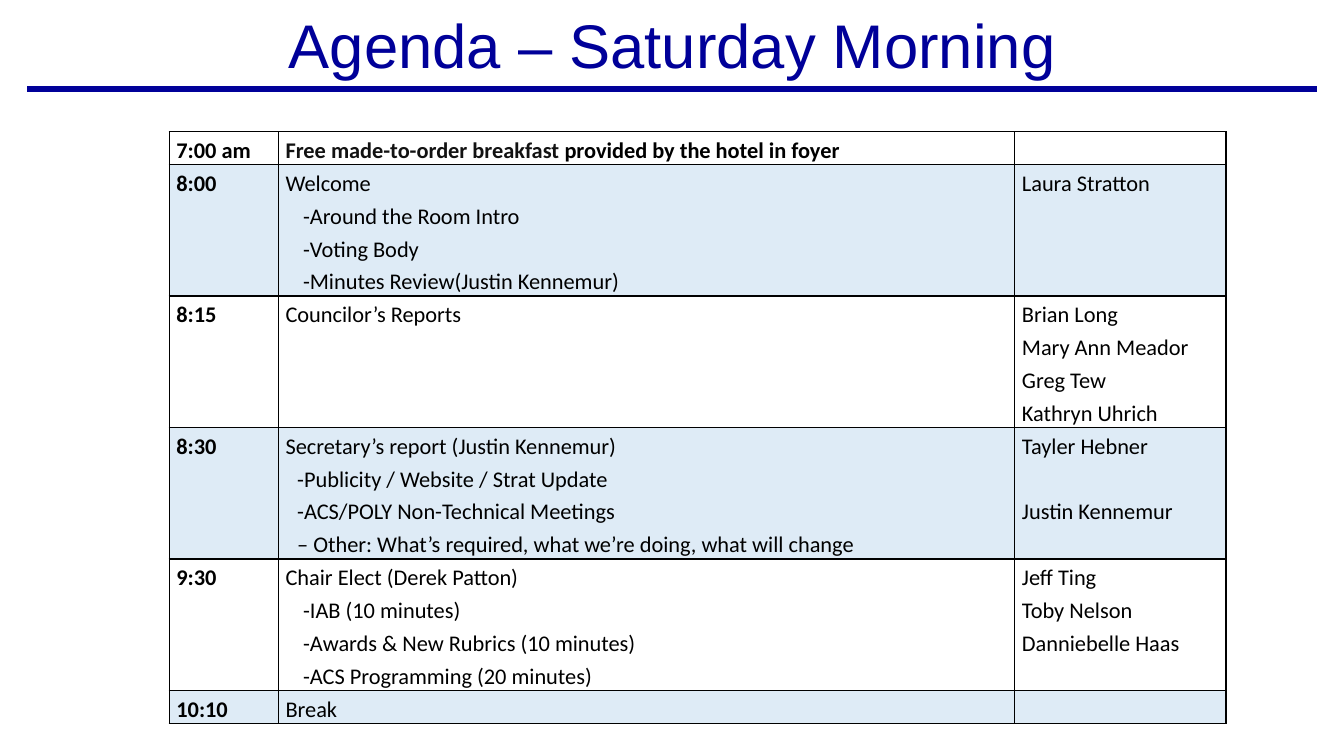
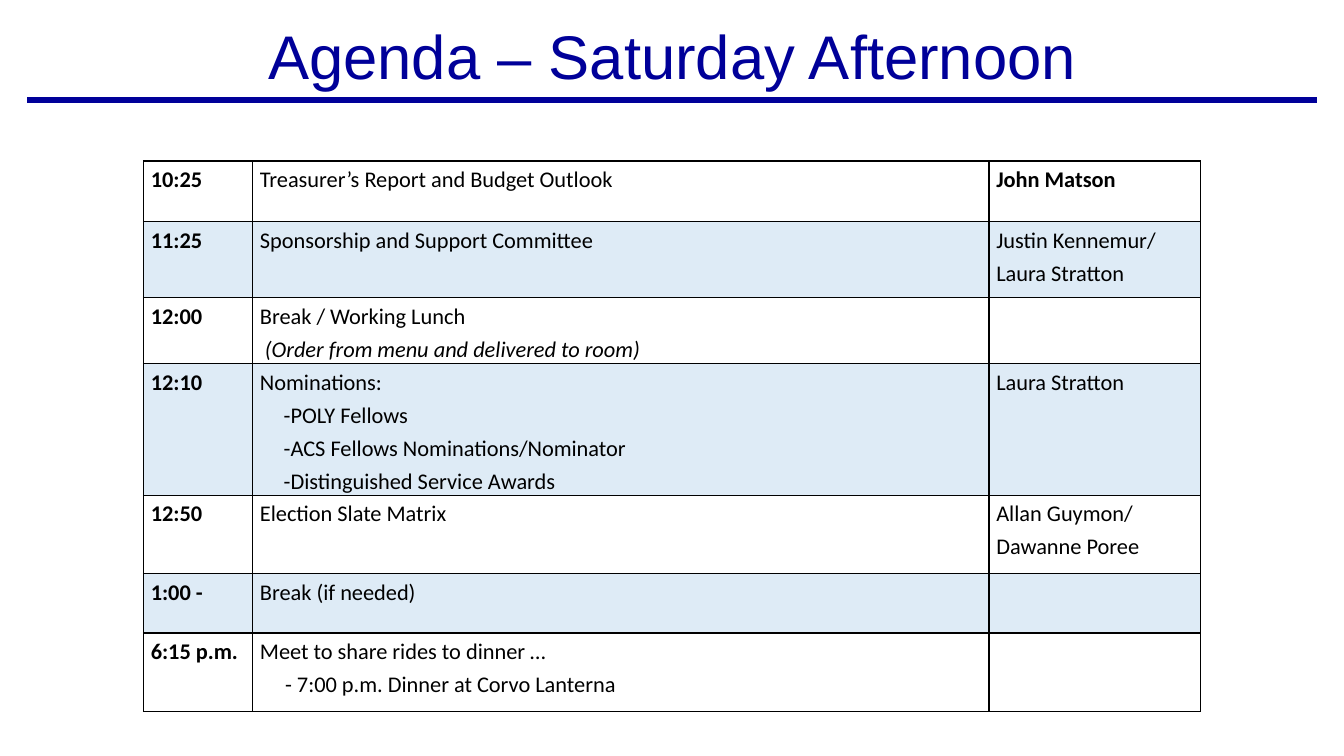
from lxml import etree
from pptx import Presentation
from pptx.dml.color import RGBColor
from pptx.enum import shapes, text
from pptx.oxml import ns
from pptx.util import Pt

# Shared look
NAVY, BLACK, CHARCOAL, BAND = "000099", "000000", "121212", "5B9BD5"
BAND_OPACITY = 20
TITLE_HEIGHT = 57.6
COLUMN_WIDTHS = (78, 526, 151)
LINE_HEIGHT = 23.4


def color(hex_value):
    return RGBColor.from_string(hex_value)


def sub_element(parent, tag, **attributes):
    return etree.SubElement(parent, ns.qn(tag), attributes)


# Text
def write(paragraph, content, size=16, font="Calibri", hex_color=BLACK, bold=False,
          italic=False, spacing=1.2, align=None, before=0):
    run = paragraph.add_run()
    run.text = content
    run.font.size = Pt(size)
    run.font.name = font
    run.font.bold = bold
    run.font.italic = italic
    run.font.color.rgb = color(hex_color)
    paragraph.line_spacing = spacing
    paragraph.space_before = Pt(before)
    if align is not None:
        paragraph.alignment = align


def line(content, indent=0, hanging=0, **text_format):
    """One paragraph of a cell; content is a string or (string, colour) pairs."""
    return content, indent, hanging, text_format


def fill_text(frame, lines, bold):
    for index, entry in enumerate(lines):
        if isinstance(entry, str):
            entry = line(entry)
        content, indent, hanging, text_format = entry
        paragraph = frame.add_paragraph() if index else frame.paragraphs[0]
        pieces = [(content, BLACK)] if isinstance(content, str) else content
        for piece, hex_color in pieces:
            write(paragraph, piece, hex_color=hex_color, **{"bold": bold, **text_format})
        if indent:
            properties = paragraph._p.get_or_add_pPr()
            properties.set("marL", str(Pt(indent)))
            properties.set("indent", str(Pt(-hanging)))


# Title and rule
def add_heading(presentation, title, top):
    slide = presentation.slides.add_slide(presentation.slide_layouts[5])
    shape = slide.shapes.title
    shape.left, shape.top = Pt(11.5), Pt(top)
    shape.width, shape.height = Pt(938), Pt(TITLE_HEIGHT)
    frame = shape.text_frame
    frame.word_wrap = True
    frame.auto_size = text.MSO_AUTO_SIZE.NONE
    frame.vertical_anchor = text.MSO_ANCHOR.MIDDLE
    write(frame.paragraphs[0], title, size=44, font="Arial", hex_color=NAVY,
          spacing=0.9, align=text.PP_ALIGN.CENTER)

    rule_top = Pt(top + TITLE_HEIGHT)
    rule = slide.shapes.add_connector(shapes.MSO_CONNECTOR.STRAIGHT,
                                      Pt(19.5), rule_top, Pt(941), rule_top)
    rule.line.color.rgb = color(NAVY)
    rule.line.width = Pt(4.5)
    sub_element(rule._element.spPr, "a:effectLst")
    return slide


# Table
def format_cell(cell, banded):
    cell.margin_left = cell.margin_right = Pt(5.2)
    cell.margin_top = cell.margin_bottom = 0
    cell.vertical_anchor = text.MSO_ANCHOR.TOP
    properties = cell._tc.get_or_add_tcPr()
    for side in ("L", "R", "T", "B"):
        border = sub_element(properties, f"a:ln{side}", w=str(Pt(1)))
        sub_element(sub_element(border, "a:solidFill"), "a:srgbClr", val=BLACK)
    if banded:
        fill = sub_element(properties, "a:solidFill")
        band = sub_element(fill, "a:srgbClr", val=BAND)
        sub_element(band, "a:alpha", val=str(BAND_OPACITY * 1000))
    else:
        sub_element(properties, "a:noFill")


def add_agenda(slide, left, top, rows):
    """Each row is (height, time, topic lines, speaker lines)."""
    frame = slide.shapes.add_table(len(rows), len(COLUMN_WIDTHS), Pt(left), Pt(top),
                                   Pt(sum(COLUMN_WIDTHS)), Pt(sum(row[0] for row in rows)))
    table = frame.table
    table.first_row = table.horz_banding = False
    for column, width in zip(table.columns, COLUMN_WIDTHS):
        column.width = Pt(width)
    for row_index, (height, time, topics, speakers) in enumerate(rows):
        table.rows[row_index].height = Pt(height)
        for column_index, lines in enumerate(([time], topics, speakers)):
            cell = table.cell(row_index, column_index)
            format_cell(cell, banded=row_index % 2 == 1)
            fill_text(cell.text_frame, lines, bold=column_index == 0)


def items(*contents, indent=12.5):
    return [line(content, indent) for content in contents]


MORNING = [
    (LINE_HEIGHT, "7:00 am",
     [line([("Free made-to-order breakfast ", CHARCOAL),
            ("provided by the hotel in foyer", BLACK)], bold=True)], []),
    (4 * LINE_HEIGHT, "8:00",
     ["Welcome", *items("-Around the Room Intro", "-Voting Body",
                        "-Minutes Review(Justin Kennemur)")],
     ["Laura Stratton"]),
    (4 * LINE_HEIGHT, "8:15", ["Councilor’s Reports"],
     ["Brian Long", "Mary Ann Meador", "Greg Tew", "Kathryn Uhrich"]),
    (4 * LINE_HEIGHT, "8:30",
     ["Secretary’s report (Justin Kennemur)",
      line("-Publicity / Website / Strat Update", 8.3),
      line("-ACS/POLY Non-Technical Meetings", 17, 8.7),
      line("– Other: What’s required, what we’re doing, what will change", 17, 8.7)],
     ["Tayler Hebner", line("Justin Kennemur", before=LINE_HEIGHT)]),
    (4 * LINE_HEIGHT, "9:30",
     ["Chair Elect (Derek Patton)",
      *items("-IAB (10 minutes)", "-Awards & New Rubrics (10 minutes)",
             "-ACS Programming (20 minutes)")],
     ["Jeff Ting", "Toby Nelson", "Danniebelle Haas"]),
    (LINE_HEIGHT, "10:10", ["Break"], []),
]

AFTERNOON = [
    (43.3, "10:25", ["Treasurer’s Report and Budget Outlook"],
     [line("John Matson", bold=True)]),
    (54.5, "11:25", ["Sponsorship and Support Committee"],
     ["Justin Kennemur/ Laura Stratton"]),
    (2 * LINE_HEIGHT, "12:00",
     ["Break / Working Lunch",
      line("(Order from menu and delivered to room)", 3.6, italic=True)], []),
    (4 * LINE_HEIGHT, "12:10",
     ["Nominations:", *items("-POLY Fellows", "-ACS Fellows Nominations/Nominator",
                             "-Distinguished Service Awards", indent=17)],
     ["Laura Stratton"]),
    (56, "12:50", ["Election Slate Matrix"], ["Allan Guymon/", "Dawanne Poree"]),
    (42.5, "1:00 -", ["Break (if needed)"], []),
    (56, "6:15 p.m.",
     ["Meet to share rides to dinner …",
      line("- 7:00 p.m. Dinner at Corvo Lanterna", 18)], []),
]


def main():
    presentation = Presentation()
    presentation.slide_width, presentation.slide_height = Pt(960), Pt(540)

    morning = add_heading(presentation, "Agenda – Saturday Morning", 6)
    add_agenda(morning, 120.8, 94, MORNING)

    afternoon = add_heading(presentation, "Agenda – Saturday Afternoon", 14)
    add_agenda(afternoon, 102.5, 115, AFTERNOON)

    presentation.save("out.pptx")


if __name__ == "__main__":
    main()
